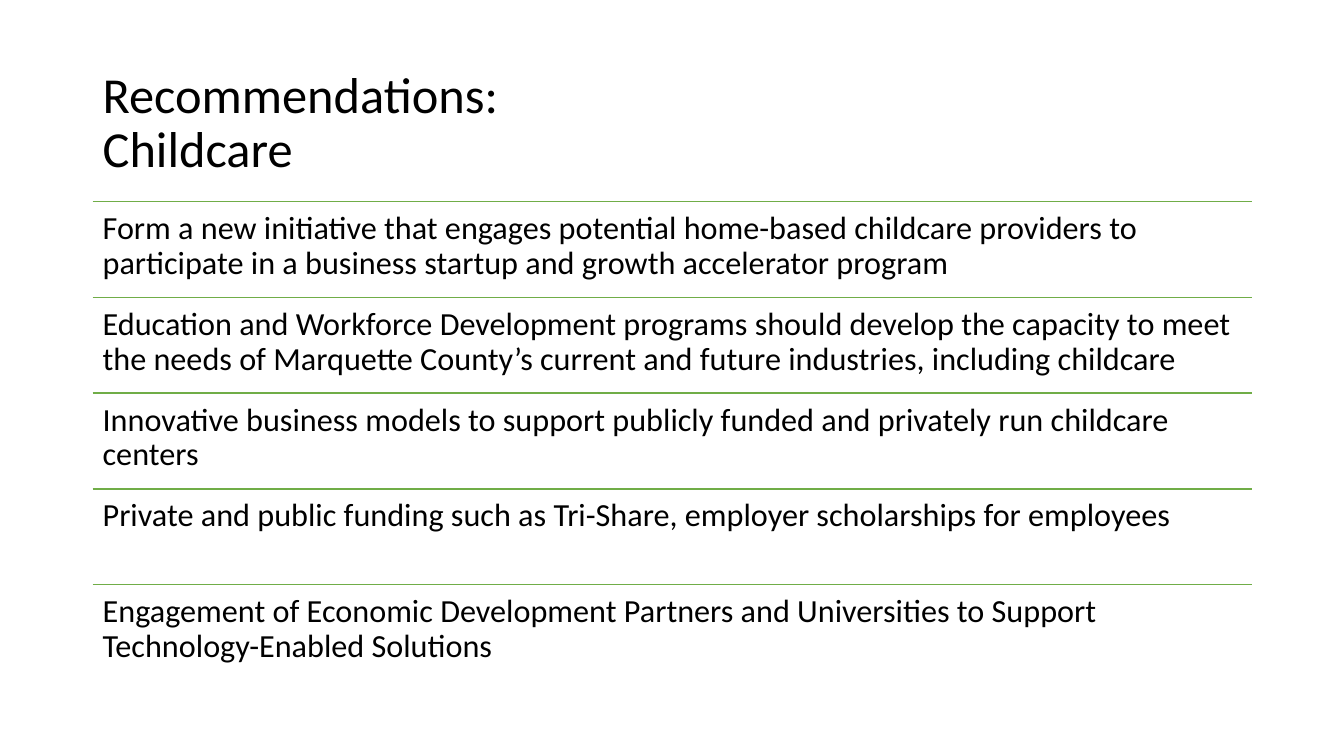
from lxml import etree
from pptx import Presentation
from pptx.dml.color import RGBColor
from pptx.enum.shapes import MSO_CONNECTOR
from pptx.enum.text import MSO_ANCHOR
from pptx.oxml.ns import qn
from pptx.util import Inches, Pt

COLORS = {"text": "000000", "rule": "70AD47"}
FONT = "Calibri"
LEFT, WIDTH = 0.92, 11.5
LIST_TOP, ROW_HEIGHT = 2, 0.95

RECOMMENDATIONS = [
    "Form a new initiative that engages potential home-based childcare providers "
    "to participate in a business startup and growth accelerator program",
    "Education and Workforce Development programs should develop the capacity to meet "
    "the needs of Marquette County’s current and future industries, including childcare",
    "Innovative business models to support publicly funded and privately run childcare centers",
    "Private and public funding such as Tri-Share, employer scholarships for employees",
    "Engagement of Economic Development Partners and Universities to Support "
    "Technology-Enabled Solutions",
]


def add_text(shapes, text, top, height, size):
    """Add a full-width text box and return its text frame."""
    box = shapes.add_textbox(Inches(LEFT), Inches(top), Inches(WIDTH), Inches(height))
    tf = box.text_frame
    tf.word_wrap = True
    p = tf.paragraphs[0]
    p.text = text
    p.line_spacing = 0.9
    for r in p.runs:
        r.font.name = FONT
        r.font.size = Pt(size)
        r.font.color.rgb = RGBColor.from_string(COLORS["text"])
    return tf


prs = Presentation()
prs.slide_width = Inches(13.33)
prs.slide_height = Inches(7.5)
s = prs.slides.add_slide(prs.slide_layouts[6])

title = add_text(s.shapes, "Recommendations:\vChildcare", 0.61, 1.24, 36)
title.vertical_anchor = MSO_ANCHOR.MIDDLE

group = s.shapes.add_group_shape()
for i, recommendation in enumerate(RECOMMENDATIONS):
    top = LIST_TOP + i * ROW_HEIGHT
    rule = group.shapes.add_connector(
        MSO_CONNECTOR.STRAIGHT,
        Inches(LEFT), Inches(top), Inches(LEFT + WIDTH), Inches(top),
    )
    rule.line.color.rgb = RGBColor.from_string(COLORS["rule"])
    rule.line.width = Pt(1)
    etree.SubElement(rule._element.spPr, qn("a:effectLst"))

    tf = add_text(group.shapes, recommendation, top, ROW_HEIGHT, 23)
    tf.margin_left = tf.margin_right = Inches(0.1)
    tf.margin_top = tf.margin_bottom = Inches(0.1)
    tf.paragraphs[0].space_after = Pt(8)

prs.save("out.pptx")
